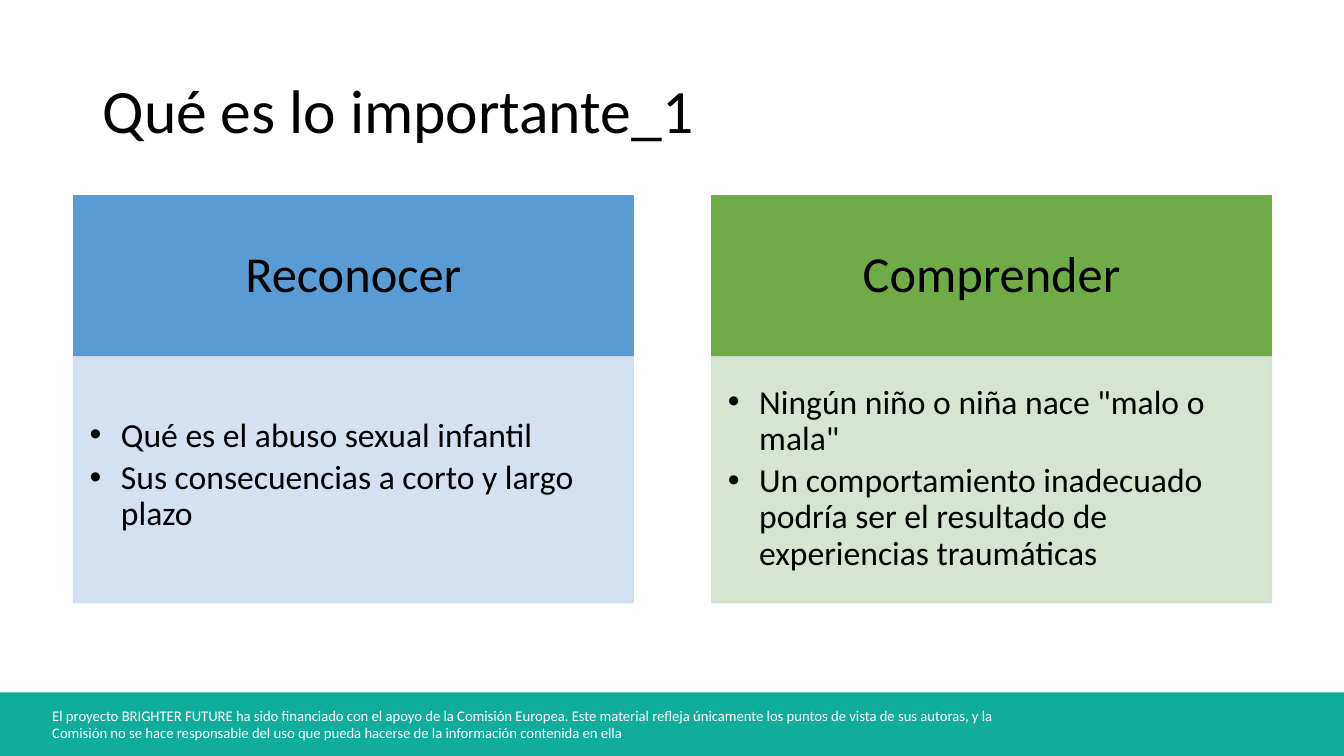
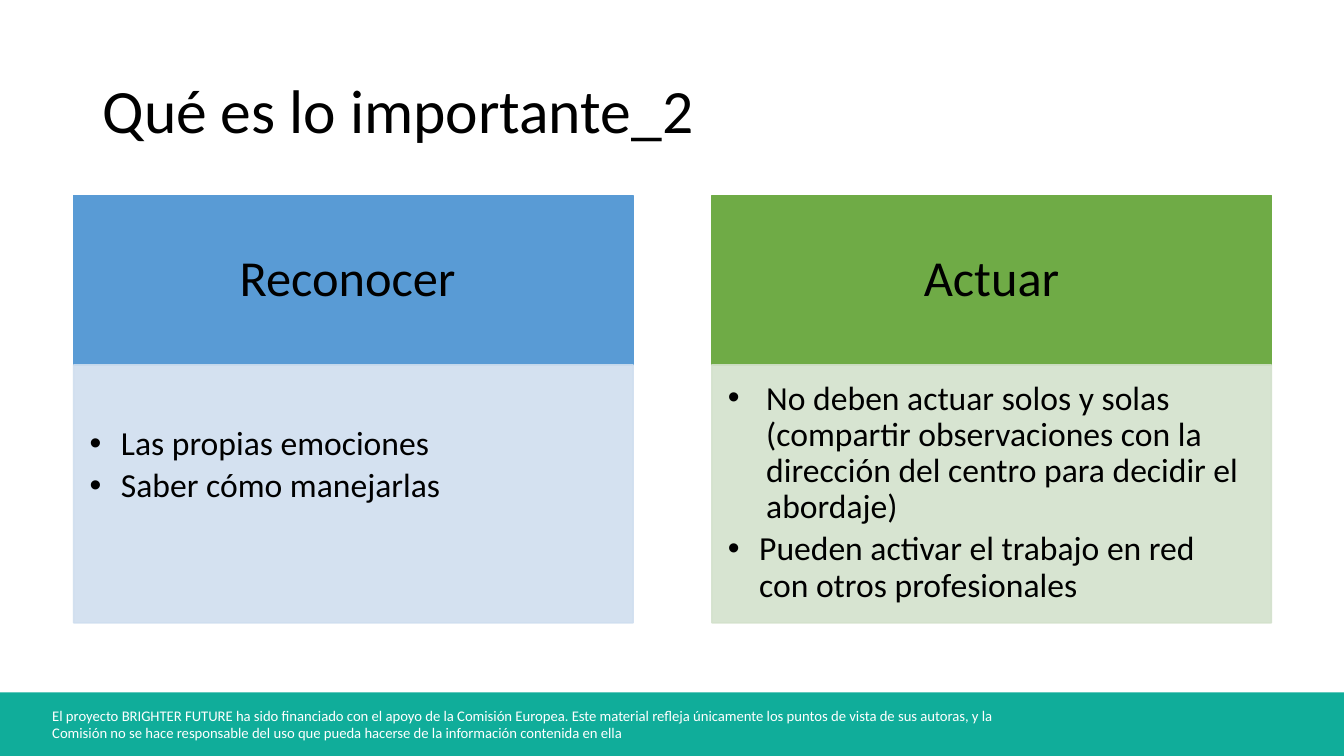
from dataclasses import dataclass

from lxml import etree
from pptx import Presentation
from pptx.dml.color import RGBColor
from pptx.enum.shapes import MSO_SHAPE
from pptx.enum.text import MSO_ANCHOR, PP_ALIGN
from pptx.oxml.ns import qn
from pptx.util import Inches, Pt

RECTANGLE = MSO_SHAPE.RECTANGLE
TOP, MIDDLE = MSO_ANCHOR.TOP, MSO_ANCHOR.MIDDLE
LEFT, CENTER = PP_ALIGN.LEFT, PP_ALIGN.CENTER

COLORS = {
    "black": "000000",
    "white": "FFFFFF",
    "teal": "10AD9A",
    "blue": "599BD5",
    "pale blue": "CFDEEF",
    "green": "6FAB46",
    "pale green": "D3E1CC",
}
FONT = "Calibri"
PAGE_WIDTH, PAGE_HEIGHT = 13.33, 7.5
FOOTER_TOP = 6.87
COLUMN_LEFT, COLUMN_TOP, COLUMN_WIDTH, COLUMN_PITCH = 0.73, 1.94, 5.55, 6.33
COLUMN_COLORS = [("blue", "pale blue"), ("green", "pale green")]
BODY_OPACITY = 89
FOOTER = (
    "El proyecto BRIGHTER FUTURE ha sido financiado con el apoyo de la Comisión Europea. "
    "Este material refleja únicamente los puntos de vista de sus autoras, y la Comisión "
    "no se hace responsable del uso que pueda hacerse de la información contenida en ella"
)


@dataclass
class Bullet:
    text: str
    indent: float = 0.31


@dataclass
class Column:
    heading: str
    bullets: list[Bullet]
    text_top: float


@dataclass
class Page:
    title: str
    header_height: float
    body_height: float
    columns: list[Column]


PAGES = [
    Page("Qué es lo importante_1", 1.6, 2.44, [
        Column("Reconocer", [
            Bullet("Qué es el abuso sexual infantil"),
            Bullet("Sus consecuencias a corto y largo plazo"),
        ], 0.61),
        Column("Comprender", [
            Bullet('Ningún niño o niña nace "malo o mala"'),
            Bullet("Un comportamiento inadecuado podría ser el resultado "
                   "de experiencias traumáticas"),
        ], 0.28),
    ]),
    Page("Qué es lo importante_2", 1.68, 2.56, [
        Column("Reconocer ", [
            Bullet("Las propias emociones"),
            Bullet("Saber cómo manejarlas"),
        ], 0.61),
        Column("Actuar", [
            Bullet("No deben actuar solos y solas (compartir observaciones con la "
                   "dirección del centro para decidir el abordaje)", 0.38),
            Bullet("Pueden activar el trabajo en red con otros profesionales"),
        ], 0.16),
    ]),
]


def rgb(name: str) -> RGBColor:
    return RGBColor.from_string(COLORS[name])


def add_rectangle(slide, left: float, top: float, width: float, height: float,
                  color: str, opacity: int = 100, outlined: bool = True):
    box = slide.shapes.add_shape(
        RECTANGLE, Inches(left), Inches(top), Inches(width), Inches(height))
    box.shadow.inherit = False
    box.fill.solid()
    box.fill.fore_color.rgb = rgb(color)
    if outlined:
        box.line.width = Pt(1)
        box.line.color.rgb = rgb(color)
    else:
        box.line.fill.background()
    if opacity < 100:
        for fill_color in box._element.spPr.iter(qn("a:srgbClr")):
            etree.SubElement(fill_color, qn("a:alpha"), val=str(opacity * 1000))
    return box


def set_frame(box, anchor, insets: tuple[float, float, float, float]):
    """Wrap the text and set its anchor and left, top, right, bottom insets."""
    frame = box.text_frame
    sides = ("margin_left", "margin_top", "margin_right", "margin_bottom")
    formats = {"word_wrap": True, "vertical_anchor": anchor,
               **dict(zip(sides, map(Inches, insets)))}
    for name, value in formats.items():
        setattr(frame, name, value)
    return frame


def write(para, text: str, size: float, color: str = "black",
          align=LEFT, spacing: float = 0.9) -> None:
    para.alignment = align
    para.line_spacing = spacing
    span = para.add_run()
    span.text = text
    for name, value in {"name": FONT, "size": Pt(size)}.items():
        setattr(span.font, name, value)
    span.font.color.rgb = rgb(color)


def add_bullet_mark(para, indent: float) -> None:
    properties = para._p.get_or_add_pPr()
    properties.set("marL", str(Inches(indent)))
    properties.set("indent", str(-Inches(indent)))
    mark_color = etree.SubElement(properties, qn("a:buClr"))
    etree.SubElement(mark_color, qn("a:srgbClr"), val=COLORS["black"])
    etree.SubElement(properties, qn("a:buFont"), typeface="Arial")
    etree.SubElement(properties, qn("a:buChar"), char="•")


def add_label(slide, text: str, left: float, top: float, width: float,
              height: float, anchor, **style) -> None:
    box = slide.shapes.add_textbox(
        Inches(left), Inches(top), Inches(width), Inches(height))
    frame = set_frame(box, anchor, (0.1, 0.05, 0.1, 0.05))
    write(frame.paragraphs[0], text, **style)


def add_column(slide, page: Page, column: Column, index: int) -> None:
    left = COLUMN_LEFT + index * COLUMN_PITCH
    header_color, body_color = COLUMN_COLORS[index]

    header = add_rectangle(slide, left, COLUMN_TOP, COLUMN_WIDTH,
                           page.header_height, header_color)
    frame = set_frame(header, MIDDLE, (0.35, 0.2, 0.35, 0.2))
    write(frame.paragraphs[0], column.heading, 36, align=CENTER)

    body = add_rectangle(slide, left, COLUMN_TOP + page.header_height, COLUMN_WIDTH,
                         page.body_height, body_color, BODY_OPACITY)
    frame = set_frame(body, TOP, (0.16, column.text_top, 0.22, 0.1))
    for number, bullet in enumerate(column.bullets):
        para = frame.add_paragraph() if number else frame.paragraphs[0]
        add_bullet_mark(para, bullet.indent)
        if number:
            para.space_before = Pt(4.2)
        write(para, bullet.text, 24)


def add_page(deck, page: Page) -> None:
    slide = deck.slides.add_slide(deck.slide_layouts[6])
    add_rectangle(slide, 0, FOOTER_TOP, PAGE_WIDTH, PAGE_HEIGHT - FOOTER_TOP,
                  "teal", outlined=False)
    add_label(slide, FOOTER, 0.42, 6.96, 10, 0.45, TOP,
              size=10.5, color="white", spacing=1.0)
    add_label(slide, page.title, 0.92, 0.4, 11.5, 1.45, MIDDLE, size=44)
    for index, column in enumerate(page.columns):
        add_column(slide, page, column, index)


def main() -> None:
    deck = Presentation()
    deck.slide_width = Inches(PAGE_WIDTH)
    deck.slide_height = Inches(PAGE_HEIGHT)
    for page in PAGES:
        add_page(deck, page)
    deck.save("out.pptx")


if __name__ == "__main__":
    main()
